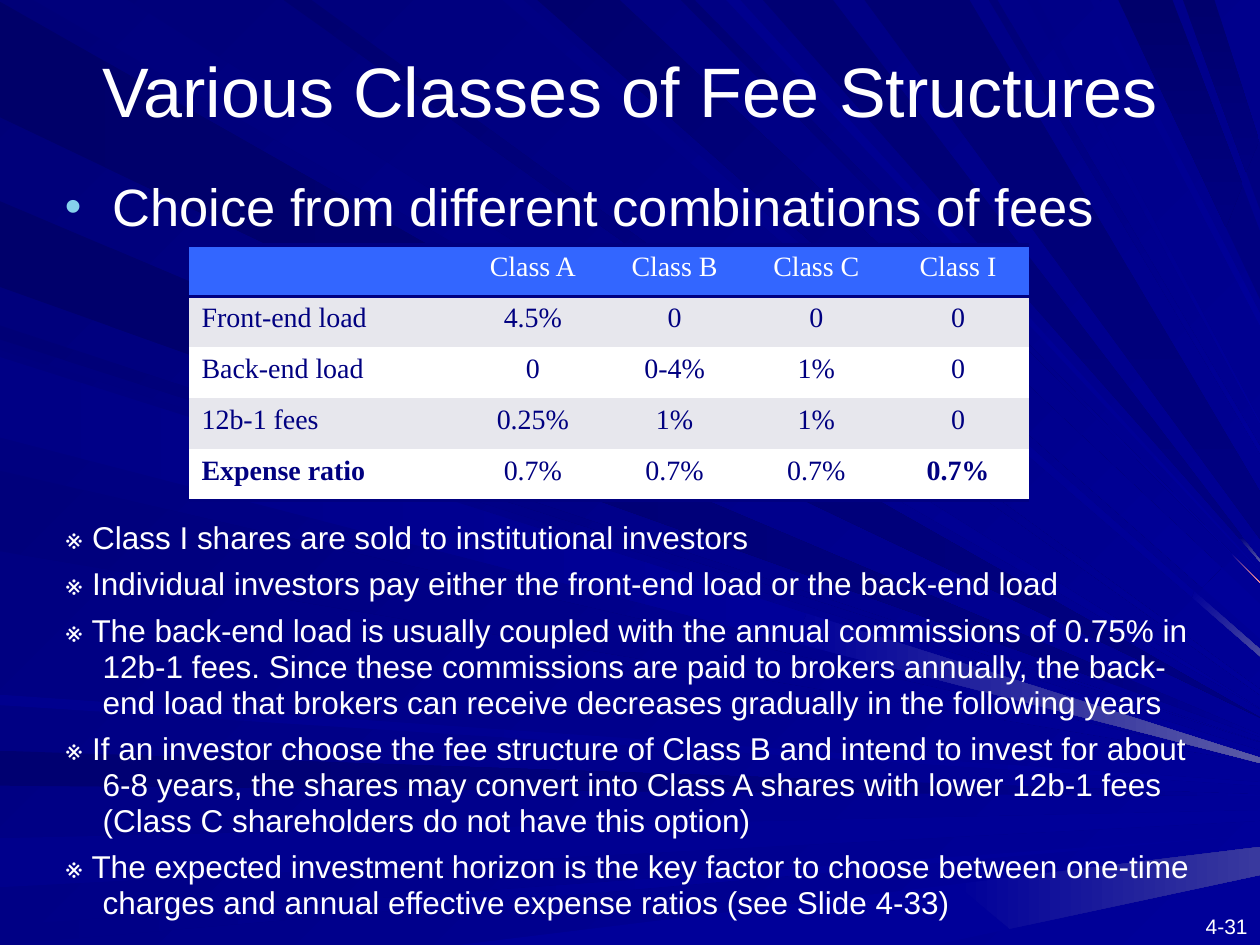
from typing import NamedTuple, Optional

from lxml.etree import SubElement as Sub
from pptx import Presentation
from pptx.dml.color import RGBColor
from pptx.enum.text import MSO_ANCHOR as Anchor, PP_ALIGN as Align
from pptx.oxml.ns import qn
from pptx.util import Pt

WIDE, HIGH = 720, 540
WHITE, NAVY, BLUE, GREY = "FFFFFF", "000080", "3366FF", "E7E7ED"
GLOW, PALE = "000099", "5A5AA6"


class Beam(NamedTuple):
    """Runs from two places on one slide side to two heights on the right side."""
    side: str
    near: tuple
    far: tuple
    dark: str
    light: str = GLOW
    angle: int = 0  # clockwise
    seam: Optional[tuple] = None  # share of each edge where the tip starts
    tip: Optional[str] = None  # no tip colour means a solid tip


class Box(NamedTuple):
    left: float
    top: float
    width: float
    height: float


# Light beams of the backdrop, from back to front
BEAMS = [
    Beam("left", (1, 67), (410, 410), "000069", NAVY),
    Beam("top", (19, 73), (405, 405), "00007B", angle=45),
    Beam("left", (429, 449), (454, 455), "000071", NAVY, seam=(0.7, 0.7), tip=GLOW),
    Beam("left", (479, 507), (463, 469), "00008C"),
    Beam("left", (529, 540), (477, 477), "000085", seam=(0.63, 0.63)),
    Beam("bottom", (262, 534), (484, 500), GLOW, seam=(0.62, 0.23), tip="39399E"),
    Beam("left", (186, 194), (424, 424), "000076", angle=45),
    Beam("left", (115, 164), (420, 421), "00006B", NAVY, seam=(0.87, 0.87), tip=GLOW),
    Beam("top", (287, 299), (375, 371), "000083", angle=45, seam=(0.91, 0.91), tip="4A4AA1"),
    Beam("top", (307, 354), (365, 345), "00006D", angle=45, seam=(0.92, 0.94)),
    Beam("top", (389, 397), (333, 333), "000073", angle=45, seam=(0.95, 0.95), tip="FF9999"),
    Beam("top", (436, 476), (321, 320), "000073", NAVY, 90, (0.96, 0.96), PALE),
    Beam("top", (639, 670), (171, 132), "00006B", NAVY, 90, (0.76, 0.8)),
    Beam("top", (676, 694), (120, 82), "00006D", NAVY, 90, (0.82, 0.98)),
    Beam("left", (200, 246), (429, 433), "00007E", angle=45),
    Beam("left", (269, 315), (436, 436), "00007B", angle=45),
    Beam("left", (397, 403), (447, 449), "00008E"),
    Beam("top", (162, 178), (397, 394), "000070", angle=45),
    Beam("top", (415, 423), (327, 326), "00008E", angle=45),
    Beam("top", (494, 554), (308, 281), "000073", NAVY, 90),
    Beam("top", (565, 570), (259, 255), "000078", angle=45),
    Beam("top", (587, 593), (242, 241), "000085", angle=45),
    Beam("top", (623, 628), (186, 179), "00008A", angle=45),
    Beam("left", (204, 250), (433, 436), "000085", seam=(0.64, 0.63), tip=PALE),
]

ROWS = [
    ["", "Class A", "Class B", "Class C", "Class I"],
    ["Front-end load", "4.5%", "0", "0", "0"],
    ["Back-end load", "0", "0-4%", "1%", "0"],
    ["12b-1 fees", "0.25%", "1%", "1%", "0"],
    ["Expense ratio", "0.7%", "0.7%", "0.7%", "0.7%"],
]
BOLD = {(4, 0), (4, 4)}

NOTES = [
    "※ Class I shares are sold to institutional investors",
    "※ Individual investors pay either the front-end load or the back-end load",
    "※ The back-end load is usually coupled with the annual commissions of 0.75% in 12b-1 fees. "
    "Since these commissions are paid to brokers annually, the back-end load that brokers can "
    "receive decreases gradually in the following years",
    "※ If an investor choose the fee structure of Class B and intend to invest for about 6-8 years, "
    "the shares may convert into Class A shares with lower 12b-1 fees (Class C shareholders do not "
    "have this option)",
    "※ The expected investment horizon is the key factor to choose between one-time charges and "
    "annual effective expense ratios (see Slide 4-33)",
]


def rgb(code: str) -> RGBColor:
    return RGBColor.from_string(code)


def paint(fill, start: str, end: Optional[str] = None, angle: int = 0) -> None:
    if end is None:
        fill.solid()
        fill.fore_color.rgb = rgb(start)
        return
    fill.gradient()
    fill.gradient_angle = -angle % 360
    for stop, code in zip(fill.gradient_stops, (start, end)):
        stop.color.rgb = rgb(code)


def draw_area(slide, pts: list, start: str, end: Optional[str], angle: int) -> None:
    first, *rest = [(Pt(x), Pt(y)) for x, y in pts]
    pen = slide.shapes.build_freeform(*first)
    pen.add_line_segments(rest, close=True)
    shape = pen.convert_to_shape()
    shape.shadow.inherit = False
    shape.line.fill.background()
    paint(shape.fill, start, end, angle)


def draw_beam(slide, beam: Beam) -> None:
    place = {
        "left": lambda v: (0, v),
        "top": lambda v: (v, 0),
        "bottom": lambda v: (v, HIGH),
    }[beam.side]
    near = [place(v) for v in beam.near]
    far = [(WIDE, v) for v in beam.far]
    mid = far
    if beam.seam:
        mid = [
            (x + (u - x) * share, y + (v - y) * share)
            for (x, y), (u, v), share in zip(near, far, beam.seam)
        ]
        draw_area(slide, mid + far[::-1], beam.light, beam.tip, beam.angle)
    draw_area(slide, near + mid[::-1], beam.dark, beam.light, beam.angle)


def style(para, size: float, color: str = WHITE, face: str = "Arial", align=Align.LEFT) -> None:
    para.alignment = align
    font = para.font
    font.size, font.name, font.color.rgb = Pt(size), face, rgb(color)


def add_text(slide, box: Box, lines: list, size: float, align=Align.LEFT,
             anchor=Anchor.TOP, bullet: str = "") -> list:
    frame = slide.shapes.add_textbox(*map(Pt, box)).text_frame
    frame.word_wrap, frame.vertical_anchor = True, anchor
    frame.text = "\n".join(lines)
    for para in frame.paragraphs:
        if bullet:
            add_bullet(para, bullet, "86D1EC", 90)
        style(para, size, align=align)
    return list(frame.paragraphs)


def hang(para, indent: float) -> None:
    props = para._p.get_or_add_pPr()
    props.set("marL", str(Pt(indent)))
    props.set("indent", str(-Pt(indent)))


def add_bullet(para, char: str, color: str, size: int) -> None:
    props = para._p.get_or_add_pPr()
    Sub(Sub(props, qn("a:buClr")), qn("a:srgbClr"), val=color)
    Sub(props, qn("a:buSzPct"), val=str(size * 1000))
    Sub(props, qn("a:buFont"), typeface="Arial")
    Sub(props, qn("a:buChar"), char=char)


def add_rules(cell, edges: str) -> None:
    props = cell._tc.get_or_add_tcPr()
    for edge in "LRTB":
        line = Sub(props, qn(f"a:ln{edge}"), w=str(Pt(2)))
        if edge in edges:
            Sub(Sub(line, qn("a:solidFill")), qn("a:srgbClr"), val=NAVY)
        else:
            Sub(line, qn("a:noFill"))


def add_fees(slide, box: Box) -> None:
    table = slide.shapes.add_table(len(ROWS), len(ROWS[0]), *map(Pt, box)).table
    table.first_row = table.horz_banding = False
    for i, col in enumerate(table.columns):
        col.width = Pt(81 if i else 156)
    edges = ["TB", "T", "", "", "B"]
    for r, row in enumerate(ROWS):
        for c, text in enumerate(row):
            cell = table.cell(r, c)
            cell.text = text
            add_rules(cell, edges[r])
            paint(cell.fill, (GREY if r % 2 else WHITE) if r else BLUE)
            para = cell.text_frame.paragraphs[0]
            style(para, 16, NAVY if r else WHITE, "Times New Roman", Align.CENTER if c else Align.LEFT)
            para.font.bold = (r, c) in BOLD


def main() -> None:
    deck = Presentation()
    deck.slide_width, deck.slide_height = Pt(WIDE), Pt(HIGH)
    slide = deck.slides.add_slide(deck.slide_layouts[6])

    # Backdrop
    paint(slide.background.fill, "000078", GLOW, 45)
    for beam in BEAMS:
        draw_beam(slide, beam)

    # Page number and title
    add_text(slide, Box(666, 518.4, 54, 21.6), ["4-31"], 12, Align.RIGHT)
    add_text(slide, Box(0, 6, WIDE, 90), ["Various Classes of Fee Structures"], 40, Align.CENTER, Anchor.MIDDLE)

    # Notes below the table
    for i, para in enumerate(add_text(slide, Box(30, 294, 666, 239), NOTES, 18)):
        hang(para, 21.6)
        para.line_spacing = 0.95
        para.space_before = Pt(6 if i else 0)

    # Lead point
    lead = add_text(slide, Box(30, 96, 672, 192), ["Choice from different combinations of fees"], 30, bullet="•")
    hang(lead[0], 27)

    # Fee table
    add_fees(slide, Box(108, 140, 480, 146))
    deck.save("out.pptx")


if __name__ == "__main__":
    main()
